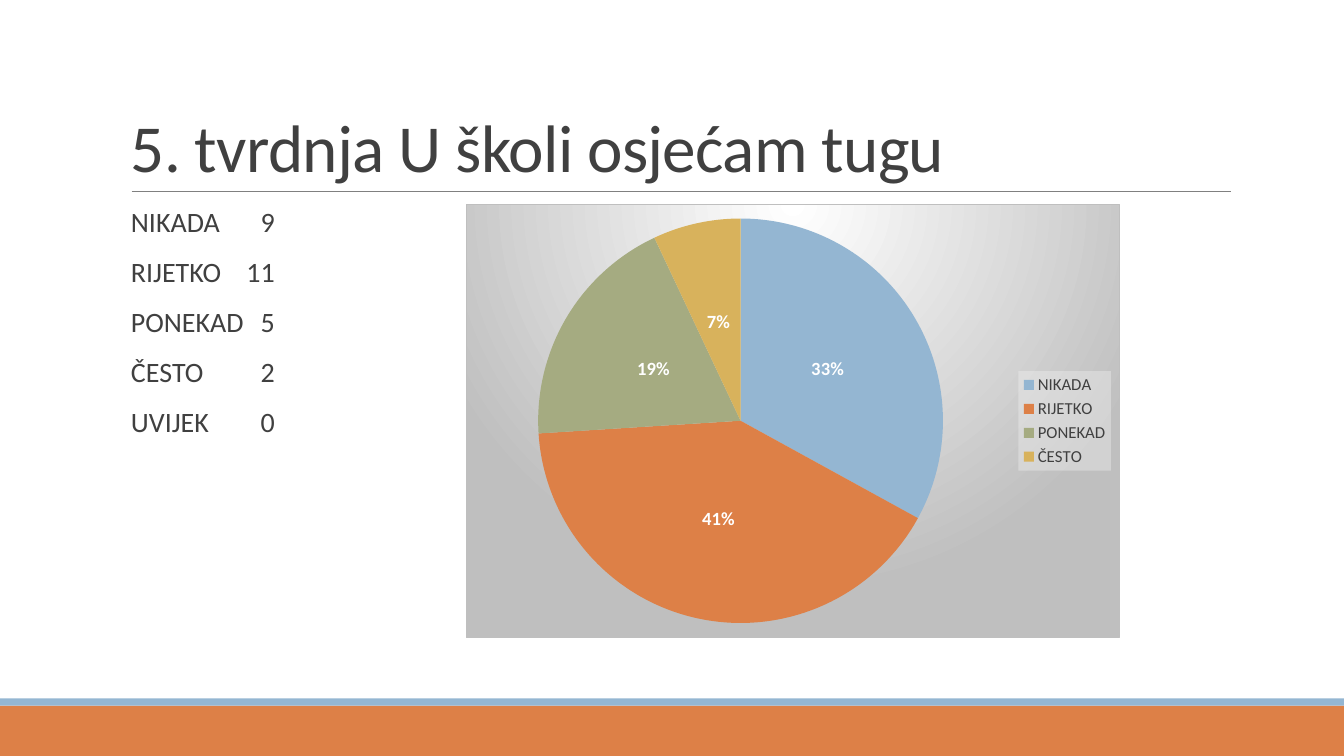
"""Builds a survey slide with answer counts and a pie chart."""
from lxml import etree
from pptx import Presentation
from pptx import util as u
from pptx.chart.data import CategoryChartData
from pptx.dml.color import RGBColor
from pptx.enum import chart as ch, shapes, text
from pptx.oxml import parse_xml
from pptx.oxml.ns import nsdecls, qn

COLORS = {
    "blue": "94B6D2", "orange": "DD8047", "green": "A5AB81", "gold": "D8B25C",
    "text": "404040", "rule": "808080", "white": "FFFFFF", "grey": "BFBFBF",
    "legend": "F2F2F2",
}
ANSWERS = [("NIKADA", 9), ("RIJETKO", 11), ("PONEKAD", 5), ("ČESTO", 2), ("UVIJEK", 0)]
PERCENTS = [33, 41, 19, 7]
SLICES = ["blue", "orange", "green", "gold"]
BACKDROP = f"""<c:spPr {nsdecls('c', 'a')}>
  <a:gradFill><a:gsLst>
    <a:gs pos="0"><a:srgbClr val="{COLORS['white']}"/></a:gs>
    <a:gs pos="100000"><a:srgbClr val="{COLORS['grey']}"/></a:gs>
  </a:gsLst><a:path path="circle">
    <a:fillToRect l="50000" t="0" r="50000" b="100000"/></a:path></a:gradFill>
  <a:ln w="9525"><a:solidFill><a:srgbClr val="{COLORS['grey']}"/></a:solidFill></a:ln>
</c:spPr>"""
LEGEND_BOX = f"""<c:spPr {nsdecls('c', 'a')}><a:solidFill>
  <a:srgbClr val="{COLORS['legend']}"><a:alpha val="39000"/></a:srgbClr>
</a:solidFill><a:ln><a:noFill/></a:ln></c:spPr>"""
PIE_LAYOUT = f"""<c:layout {nsdecls('c')}><c:manualLayout>
  <c:layoutTarget val="inner"/><c:xMode val="edge"/><c:yMode val="edge"/>
  <c:x val="0.11"/><c:y val="0.03"/><c:w val="0.62"/><c:h val="0.94"/>
</c:manualLayout></c:layout>"""


def rgb(name):
    return RGBColor.from_string(COLORS[name])


def apply(obj, formats):
    for name, value in formats.items():
        setattr(obj, name, value)


class SlideBuilder:
    def __init__(self, slide):
        self.s = slide
        self.font = "Calibri"

    def style(self, font, size, color, **formats):
        apply(font, {"name": self.font, "size": u.Pt(size), **formats})
        font.color.rgb = rgb(color)

    def bar(self, box, color):
        sp = self.s.shapes.add_shape(shapes.MSO_SHAPE.RECTANGLE, *map(u.Cm, box))
        sp.shadow.inherit = False
        sp.fill.solid()
        sp.fill.fore_color.rgb = rgb(color)
        sp.line.fill.background()

    def rule(self, ends, color, width):
        sp = self.s.shapes.add_connector(shapes.MSO_CONNECTOR.STRAIGHT, *map(u.Cm, ends))
        sp.line.color.rgb = rgb(color)
        sp.line.width = u.Pt(width)
        etree.SubElement(sp._element.spPr, qn("a:effectLst"))

    def text(self, box, lines, size, frame, paragraph, spacing=0, tab=None):
        tf = self.s.shapes.add_textbox(*map(u.Cm, box)).text_frame
        apply(tf, {"word_wrap": True, **frame})
        for i, line in enumerate(lines):
            p = tf.add_paragraph() if i else tf.paragraphs[0]
            apply(p, paragraph)
            if tab:
                tabs = etree.SubElement(p._p.get_or_add_pPr(), qn("a:tabLst"))
                etree.SubElement(tabs, qn("a:tab"), pos=str(u.Cm(tab)), algn="r")
            r = p.add_run()
            r.text = line
            self.style(r.font, size, "text")
            r.font._element.set("spc", str(spacing))

    def pie(self, box, names, values, colors):
        data = CategoryChartData()
        data.categories = names
        data.add_series("Series 1", values)
        chart = self.s.shapes.add_chart(ch.XL_CHART_TYPE.PIE, *map(u.Cm, box), data).chart
        apply(chart, {"has_title": False, "has_legend": True})
        apply(chart.font, {"name": "Arial", "size": u.Pt(10)})
        apply(chart.legend, {"position": ch.XL_LEGEND_POSITION.RIGHT,
                             "include_in_layout": False})
        self.style(chart.legend.font, 12, "text")
        plot = chart.plots[0]
        apply(plot, {"vary_by_categories": True, "has_data_labels": True})
        apply(plot.data_labels, {"show_percentage": True, "show_value": False,
                                 "number_format": "0%", "number_format_is_linked": False,
                                 "position": ch.XL_LABEL_POSITION.CENTER})
        self.style(plot.data_labels.font, 13.3, "white", bold=True)
        for i, color in enumerate(colors):
            fill = plot.series[0].points[i].format.fill
            fill.solid()
            fill.fore_color.rgb = rgb(color)
        root = chart._chartSpace
        root.find(qn("c:chart")).addnext(parse_xml(BACKDROP))
        chart.legend._element.find(qn("c:overlay")).addnext(parse_xml(LEGEND_BOX))
        area = root.find(".//" + qn("c:plotArea"))
        for layout in area.findall(qn("c:layout")):
            area.remove(layout)
        area.insert(0, parse_xml(PIE_LAYOUT))


def main():
    prs = Presentation()
    apply(prs, {"slide_width": u.Cm(33.87), "slide_height": u.Cm(19.05)})
    b = SlideBuilder(prs.slides.add_slide(prs.slide_layouts[6]))
    b.bar((0, 17.78, 33.87, 1.27), "orange")
    b.bar((0, 17.6, 33.87, 0.18), "blue")
    b.rule((3.32, 4.83, 31.01, 4.83), "rule", 0.5)
    b.text((3.05, 0.79, 27.94, 4.04), ["5. tvrdnja U školi osjećam tugu"], 48,
           {"vertical_anchor": text.MSO_ANCHOR.BOTTOM}, {"line_spacing": 0.85}, spacing=-50)
    b.text((3.05, 5.13, 27.94, 11.18), [f"{name}\t{count}" for name, count in ANSWERS], 20,
           {"margin_left": u.Cm(0.25), "margin_right": 0},
           {"line_spacing": 0.9, "space_before": u.Pt(12), "space_after": u.Pt(2)}, tab=3.63)
    b.pie((11.74, 5.13, 16.48, 10.95), [name for name, _ in ANSWERS[:4]], PERCENTS, SLICES)
    prs.save("out.pptx")


if __name__ == "__main__":
    main()
